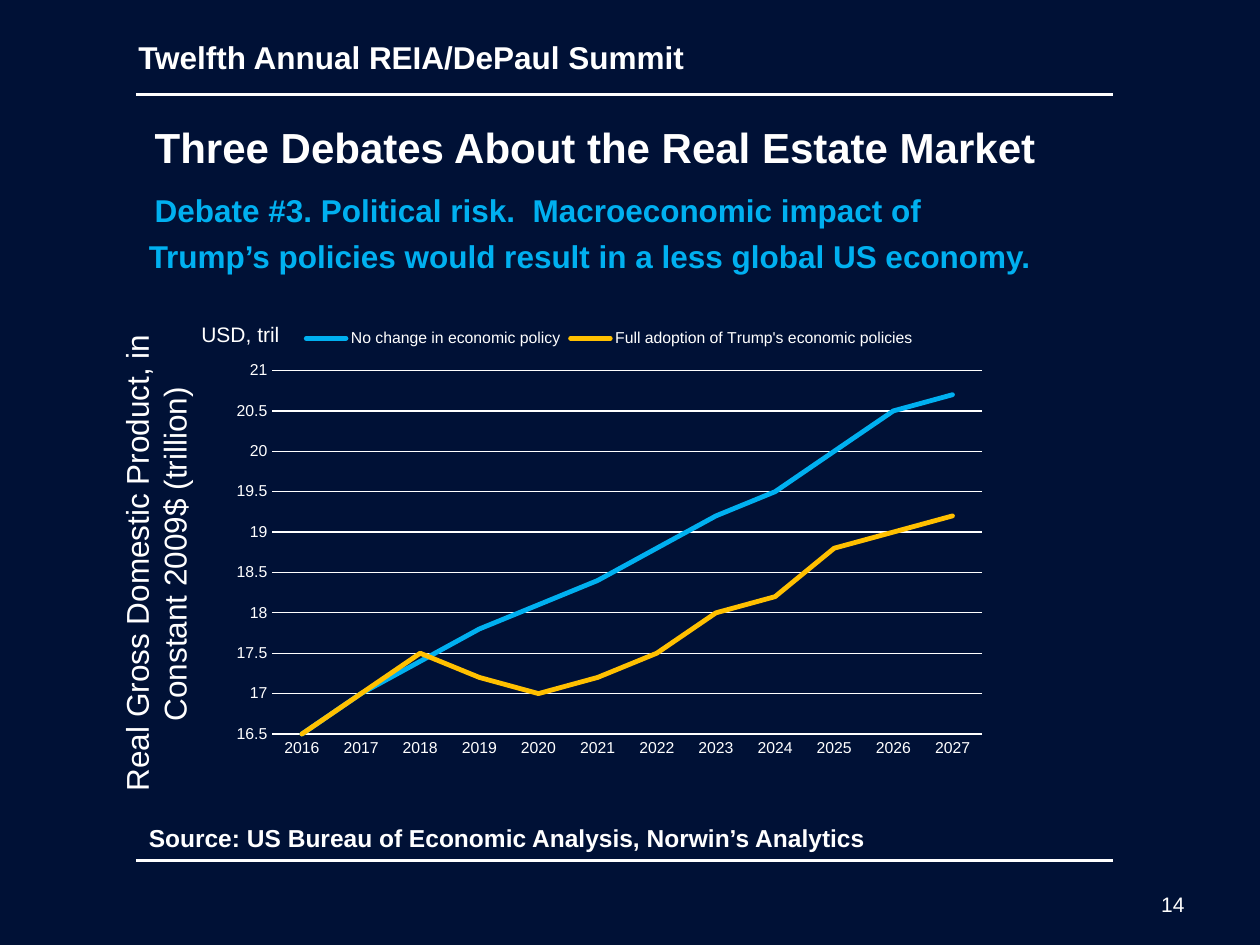
from lxml import etree
from pptx import Presentation
from pptx import util as u
from pptx.chart.data import CategoryChartData
from pptx.dml.color import RGBColor
from pptx.enum import chart as ch, shapes, text
from pptx.oxml import parse_xml
from pptx.oxml.ns import nsdecls, qn

HUES = {"navy": "001136", "white": "FFFFFF", "blue": "00B0F0", "gold": "FFC000"}
FACE = "Arial"


def hue(name):
    return RGBColor.from_string(HUES[name])


class Deck:
    def __init__(self, wide, high):
        self.prs = Presentation()
        self.prs.slide_width, self.prs.slide_height = u.Cm(wide), u.Cm(high)
        self.slide = self.prs.slides.add_slide(self.prs.slide_layouts[6])
        fill = self.slide.background.fill
        fill.solid()
        fill.fore_color.rgb = hue("navy")

    def style(self, font, size, color="white", bold=False):
        font.name, font.size, font.bold = FACE, u.Pt(size), bold
        font.color.rgb = hue(color)

    def text(self, box, rows, align="LEFT", anchor="TOP", turn=0):
        """Each row: words, size, colour, bold, indent in cm, space before in pt."""
        shape = self.slide.shapes.add_textbox(*map(u.Cm, box))
        shape.rotation = turn
        frame = shape.text_frame
        frame.word_wrap = True
        frame.vertical_anchor = getattr(text.MSO_ANCHOR, anchor)
        frame.text = "\n".join(row[0] for row in rows)
        for para, (_, size, color, bold, indent, gap) in zip(frame.paragraphs, rows):
            para.alignment = getattr(text.PP_ALIGN, align)
            if indent:
                para._p.get_or_add_pPr().set("marL", str(u.Cm(indent)))
            if gap:
                para.space_before = u.Pt(gap)
            for run in para.runs:
                self.style(run.font, size, color, bold)

    def label(self, box, words, size, bold=False, **opts):
        rows = [(line, size, "white", bold, 0, 0) for line in words.split("\n")]
        self.text(box, rows, **opts)

    def rule(self, left, right, top):
        line = self.slide.shapes.add_connector(
            shapes.MSO_CONNECTOR.STRAIGHT, *map(u.Cm, (left, top, right, top)))
        line.line.color.rgb = hue("white")
        line.line.width = u.Pt(1.5)
        etree.SubElement(line._element.spPr, qn("a:effectLst"))

    def chart(self, box, cats, series, plot):
        data = CategoryChartData()
        data.categories = cats
        for name, _, vals in series:
            data.add_series(name, vals)
        chart = self.slide.shapes.add_chart(
            ch.XL_CHART_TYPE.LINE, *map(u.Cm, box), data).chart
        self.style(chart.font, 10)
        chart.has_title = False

        # Legend
        chart.has_legend = True
        chart.legend.position = ch.XL_LEGEND_POSITION.TOP
        chart.legend.include_in_layout = False
        self.style(chart.legend.font, 9)

        # Axes
        for axis in (chart.category_axis, chart.value_axis):
            axis.major_tick_mark = axis.minor_tick_mark = ch.XL_TICK_MARK.NONE
            self.style(axis.tick_labels.font, 9)
        across, up = chart.category_axis, chart.value_axis
        up.minimum_scale, up.maximum_scale, up.major_unit = 16.5, 21, 0.5
        up.has_major_gridlines = True
        up.format.line.fill.background()
        up.tick_labels.number_format = "General"
        up.tick_labels.number_format_is_linked = False
        for line in (across.format.line, up.major_gridlines.format.line):
            line.color.rgb = hue("white")
            line.width = u.Pt(0.75)

        # Series, with round line ends
        chart.plots[0].vary_by_categories = False
        for item, (_, color, _) in zip(chart.plots[0].series, series):
            item.smooth = False
            item.marker.style = ch.XL_MARKER_STYLE.NONE
            item.format.line.color.rgb = hue(color)
            item.format.line.width = u.Pt(2.75)
            item._element.spPr.find(qn("a:ln")).set("cap", "rnd")

        # Inner plot area, in cm, as shares of the chart
        area = chart._chartSpace.chart.plotArea
        for old in area.findall(qn("c:layout")):
            area.remove(old)
        wide, high = box[2:]
        parts = "".join(f'<c:{key} val="{size / full:.4f}"/>' for key, size, full
                        in zip("xywh", plot, (wide, high, wide, high)))
        area.insert(0, parse_xml(
            f'<c:layout {nsdecls("c")}><c:manualLayout><c:layoutTarget val="inner"/>'
            f'<c:xMode val="edge"/><c:yMode val="edge"/>{parts}'
            '</c:manualLayout></c:layout>'))


def main():
    deck = Deck(25.4, 19.05)

    # Header and footer
    deck.label((2.54, 0.64, 20.1, 1.02), "Twelfth Annual REIA/DePaul Summit", 18, True)
    for top in (1.9, 17.35):
        deck.rule(2.74, 22.44, top)
    deck.label((18.2, 17.34, 5.93, 1.27), "14", 12, align="RIGHT", anchor="BOTTOM")

    # Title and debate
    deck.text((1.7, 2.32, 19.7, 4.88), [
        ("Three Debates About the Real Estate Market", 24, "white", True, 1.17, 0),
        ("Debate #3. Political risk.  Macroeconomic impact of",
         18, "blue", True, 1.17, 11),
        ("Trump’s policies would result in a less global US economy.",
         18, "blue", True, 1.05, 5),
    ])

    # Growth paths
    deck.chart((4.45, 6.35, 15.67, 9.1), [str(y) for y in range(2016, 2028)], [
        ("No change in economic policy", "blue",
         (16.5, 17, 17.4, 17.8, 18.1, 18.4, 18.8, 19.2, 19.5, 20, 20.5, 20.7)),
        ("Full adoption of Trump's economic policies", "gold",
         (16.5, 17, 17.5, 17.2, 17, 17.2, 17.5, 18, 18.2, 18.8, 19, 19.2)),
    ], (1.04, 1.12, 14.31, 7.33))

    # Chart captions and source
    deck.label((-2.74, 10.36, 11.76, 1.8),
               "Real Gross Domestic Product, in \n Constant 2009$ (trillion)",
               18, align="CENTER", turn=270)
    deck.label((3.81, 6.35, 2.11, 0.76), "USD, tril", 12)
    deck.label((2.75, 16.47, 20.75, 0.9),
               "Source: US Bureau of Economic Analysis, Norwin’s Analytics", 14, True)

    deck.prs.save("out.pptx")


if __name__ == "__main__":
    main()
